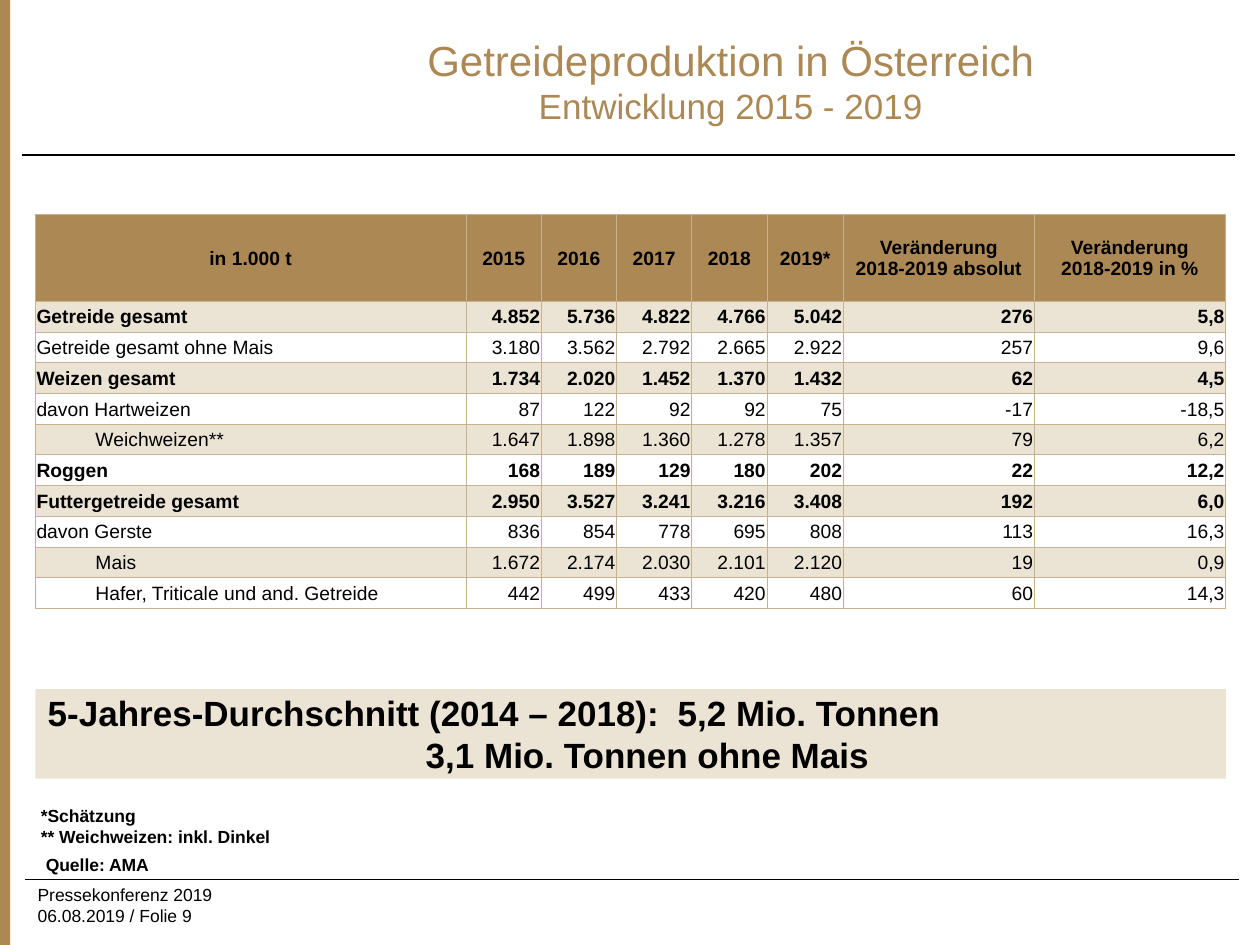
import pptx
import pptx.util
import pptx.dml.color
import pptx.enum.shapes
import pptx.enum.text
import pptx.oxml
import pptx.oxml.ns

Pt = pptx.util.Pt
Color = pptx.dml.color.RGBColor
Align = pptx.enum.text.PP_ALIGN
Anchor = pptx.enum.text.MSO_ANCHOR
Shape = pptx.enum.shapes.MSO_SHAPE

GOLD = Color(0xAC, 0x88, 0x54)
SAND = Color(0xEB, 0xE4, 0xD5)
EDGE = Color(0xC8, 0xB1, 0x8E)
BLACK = Color(0, 0, 0)
WHITE = Color(0xFF, 0xFF, 0xFF)

LEFT = 20.16
WIDTH = 680.4
WIDTHS = [246.24, 43, 43, 43, 43, 43.7, 109.1, 109.36]
INDENT = 33.7
HEAD = ["in 1.000 t", "2015", "2016", "2017", "2018", "2019*",
        "Veränderung\n2018-2019 absolut", "Veränderung\n2018-2019 in %"]
ROWS = [
    ("Getreide gesamt", True, 0, "4.852 5.736 4.822 4.766 5.042 276 5,8"),
    ("Getreide gesamt ohne Mais", False, 0, "3.180 3.562 2.792 2.665 2.922 257 9,6"),
    ("Weizen gesamt", True, 0, "1.734 2.020 1.452 1.370 1.432 62 4,5"),
    ("davon Hartweizen", False, 0, "87 122 92 92 75 -17 -18,5"),
    ("Weichweizen**", False, INDENT, "1.647 1.898 1.360 1.278 1.357 79 6,2"),
    ("Roggen", True, 0, "168 189 129 180 202 22 12,2"),
    ("Futtergetreide gesamt", True, 0, "2.950 3.527 3.241 3.216 3.408 192 6,0"),
    ("davon Gerste", False, 0, "836 854 778 695 808 113 16,3"),
    ("Mais", False, INDENT, "1.672 2.174 2.030 2.101 2.120 19 0,9"),
    ("Hafer, Triticale und and. Getreide", False, INDENT, "442 499 433 420 480 60 14,3"),
]


def style(item, size, bold=False, color=BLACK):
    item.font.name = "Arial"
    item.font.size = Pt(size)
    item.font.bold = bold
    item.font.color.rgb = color


def add_rule(slide, x, y, width):
    line = slide.shapes.add_connector(
        pptx.enum.shapes.MSO_CONNECTOR.STRAIGHT, Pt(x), Pt(y), Pt(x + width), Pt(y))
    line.line.color.rgb = BLACK
    line.line.width = Pt(0.75)
    line._element.spPr.append(pptx.oxml.parse_xml(
        f"<a:effectLst {pptx.oxml.ns.nsdecls('a')}/>"))


def add_block(slide, x, y, width, height, color):
    block = slide.shapes.add_shape(Shape.RECTANGLE, Pt(x), Pt(y), Pt(width), Pt(height))
    block.shadow.inherit = False
    block.fill.solid()
    block.fill.fore_color.rgb = color
    block.line.fill.background()
    return block


def add_label(slide, x, y, width, height, text, bold=False, inset=3.6):
    frame = slide.shapes.add_textbox(Pt(x), Pt(y), Pt(width), Pt(height)).text_frame
    frame.word_wrap = True
    frame.margin_left = frame.margin_right = Pt(2 * inset)
    frame.margin_top = frame.margin_bottom = Pt(inset)
    frame.text = text
    for para in frame.paragraphs:
        style(para, 10, bold)


def add_title(slide):
    frame = slide.shapes.add_textbox(Pt(133.2), Pt(9.36), Pt(568.8), Pt(73.44)).text_frame
    frame.word_wrap = True
    frame.vertical_anchor = Anchor.MIDDLE
    para = frame.paragraphs[0]
    para.alignment = Align.CENTER
    run = para.add_run()
    run.text = "Getreideproduktion in Österreich"
    style(run, 24, color=GOLD)
    para.add_line_break()
    run = para.add_run()
    run.text = "Entwicklung 2015 - 2019"
    style(run, 20, color=GOLD)


def add_banner(slide):
    frame = add_block(slide, LEFT, 393.84, WIDTH, 51.12, SAND).text_frame
    frame.word_wrap = False
    frame.vertical_anchor = Anchor.MIDDLE
    para = frame.paragraphs[0]
    para.text = ("5-Jahres-Durchschnitt (2014 – 2018):\t5,2 Mio. Tonnen"
                 "\v\t3,1 Mio. Tonnen ohne Mais")
    para.alignment = Align.LEFT
    stops = "".join(f'<a:tab pos="{Pt(stop)}" algn="l"/>' for stop in (216, 360))
    para._p.get_or_add_pPr().append(pptx.oxml.parse_xml(
        f"<a:tabLst {pptx.oxml.ns.nsdecls('a')}>{stops}</a:tabLst>"))
    style(para, 20, True)


def add_edges(cell):
    props = cell._tc.get_or_add_tcPr()
    for side in "LRTB":
        props.append(pptx.oxml.parse_xml(
            f'<a:ln{side} {pptx.oxml.ns.nsdecls("a")} w="{Pt(0.5)}"><a:solidFill>'
            f'<a:srgbClr val="{EDGE}"/></a:solidFill></a:ln{side}>'))


def fill_cell(cell, text, align, bold, color, indent=0):
    add_edges(cell)
    cell.fill.solid()
    cell.fill.fore_color.rgb = color
    cell.margin_left = cell.margin_right = cell.margin_top = Pt(0.72)
    cell.margin_bottom = 0
    cell.vertical_anchor = Anchor.MIDDLE
    cell.text = text
    for para in cell.text_frame.paragraphs:
        para.alignment = align
        if indent:
            para._p.get_or_add_pPr().set("marL", str(Pt(indent)))
        style(para, 11, bold)


def add_grid(slide):
    grid = slide.shapes.add_table(
        len(ROWS) + 1, len(HEAD), Pt(LEFT), Pt(122.4), Pt(WIDTH), Pt(225.5)).table
    grid.first_row = grid.horz_banding = False
    for column, width in zip(grid.columns, WIDTHS):
        column.width = Pt(width)
    for row in grid.rows:
        row.height = Pt(17.57)
    grid.rows[0].height = Pt(49.8)
    for col, text in enumerate(HEAD):
        fill_cell(grid.cell(0, col), text, Align.CENTER, True, GOLD)
    for row, (name, bold, indent, values) in enumerate(ROWS, 1):
        color = SAND if row % 2 else WHITE
        fill_cell(grid.cell(row, 0), name, Align.LEFT, bold, color, indent)
        for col, value in enumerate(values.split(), 1):
            fill_cell(grid.cell(row, col), value, Align.RIGHT, bold, color)


def main():
    deck = pptx.Presentation()
    deck.slide_width, deck.slide_height = Pt(720), Pt(540)
    slide = deck.slides.add_slide(deck.slide_layouts[6])
    add_block(slide, -0.72, 0, 6.48, 540, GOLD)
    add_rule(slide, 12.5, 88.56, 693.36)
    add_label(slide, 14.4, 501.84, 238.32, 28.8,
              "Pressekonferenz 2019\v06.08.2019 / Folie 9")
    add_rule(slide, 14.4, 502.56, 693.36)
    add_title(slide)
    add_label(slide, LEFT, 485.28, WIDTH, 17.28, "Quelle: AMA", True, 3)
    add_label(slide, 17.28, 457.2, WIDTH, 30.24,
              "*Schätzung\n** Weichweizen: inkl. Dinkel", True, 3)
    add_banner(slide)
    add_grid(slide)
    deck.save("out.pptx")


if __name__ == "__main__":
    main()
